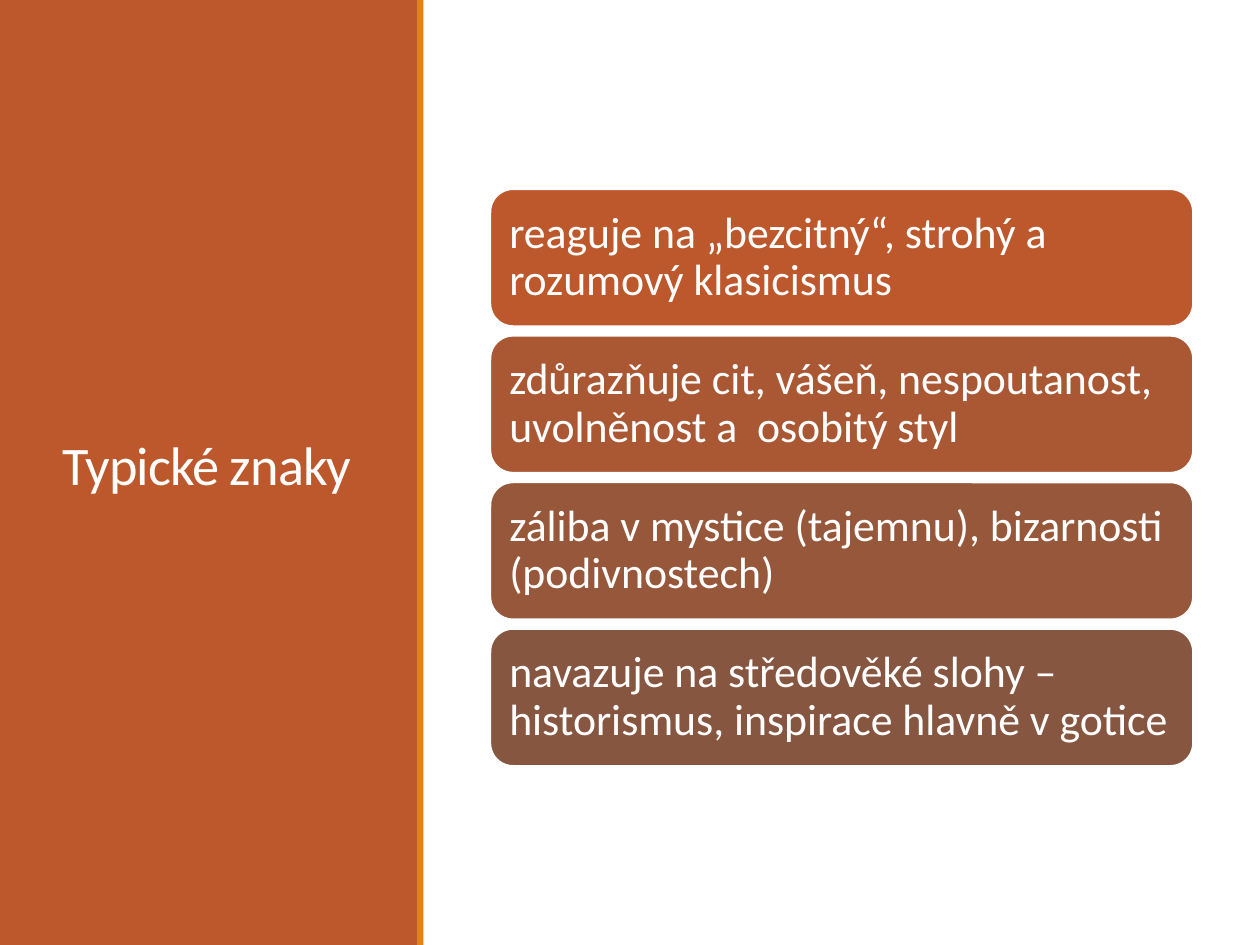
import pptx
import pptx.util
import pptx.dml.color
import pptx.enum.shapes
import pptx.enum.text

Inches = pptx.util.Inches
Pt = pptx.util.Pt
RGBColor = pptx.dml.color.RGBColor
MSO_SHAPE = pptx.enum.shapes.MSO_SHAPE

WHITE = RGBColor(0xFF, 0xFF, 0xFF)
RUST = RGBColor(0xBD, 0x58, 0x2C)
ORANGE = RGBColor(0xE4, 0x83, 0x12)
SIENNA = RGBColor(0xAA, 0x58, 0x34)
CLAY = RGBColor(0x97, 0x57, 0x3A)
BROWN = RGBColor(0x86, 0x56, 0x40)

TITLE = "Typické znaky"
TRAITS = [
    ("reaguje na „bezcitný“, strohý a rozumový klasicismus", RUST),
    ("zdůrazňuje cit, vášeň, nespoutanost, uvolněnost a  osobitý styl", SIENNA),
    ("záliba v mystice (tajemnu), bizarnosti (podivnostech)", CLAY),
    ("navazuje na středověké slohy – historismus, inspirace hlavně v gotice", BROWN),
]

CARD_LEFT, CARD_TOP, CARD_WIDTH, CARD_HEIGHT = 3.89, 1.5, 5.58, 1.09
CARD_STEP = 3.49 / 3
CARD_INSET = 0.1


def add_block(page, kind, left, top, width, height, color):
    block = page.shapes.add_shape(
        kind, Inches(left), Inches(top), Inches(width), Inches(height))
    block.shadow.inherit = False
    block.fill.solid()
    block.fill.fore_color.rgb = color
    block.line.fill.background()
    return block


def write(box, text, size, spacing):
    frame = box.text_frame
    frame.word_wrap = True
    frame.vertical_anchor = pptx.enum.text.MSO_ANCHOR.MIDDLE
    para = frame.paragraphs[0]
    para.alignment = pptx.enum.text.PP_ALIGN.LEFT
    para.line_spacing = spacing
    para.font.name = "Calibri"
    para.font.size = Pt(size)
    para.font.color.rgb = WHITE
    span = para.add_run()
    span.text = text
    return span


def main():
    deck = pptx.Presentation()
    deck.slide_width, deck.slide_height = Inches(10), Inches(7.5)
    page = deck.slides.add_slide(deck.slide_layouts[6])

    add_block(page, MSO_SHAPE.RECTANGLE, 0, 0, 3.32, 7.5, RUST)
    title = page.shapes.add_textbox(
        Inches(0.4), Inches(0.57), Inches(2.53), Inches(6.31))
    span = write(title, TITLE, 31, 0.85)
    span.font._element.set("spc", "-50")
    add_block(page, MSO_SHAPE.RECTANGLE, 3.31, 0, 0.05, 7.5, ORANGE)

    for index, (text, color) in enumerate(TRAITS):
        card = add_block(page, MSO_SHAPE.ROUNDED_RECTANGLE, CARD_LEFT,
                         CARD_TOP + index * CARD_STEP, CARD_WIDTH, CARD_HEIGHT, color)
        card.line.color.rgb = WHITE
        card.line.width = Pt(1.25)
        frame = card.text_frame
        frame.margin_left = frame.margin_right = Inches(CARD_INSET)
        frame.margin_top = frame.margin_bottom = Inches(CARD_INSET)
        write(card, text, 25, 0.9)

    deck.save("out.pptx")


if __name__ == "__main__":
    main()
